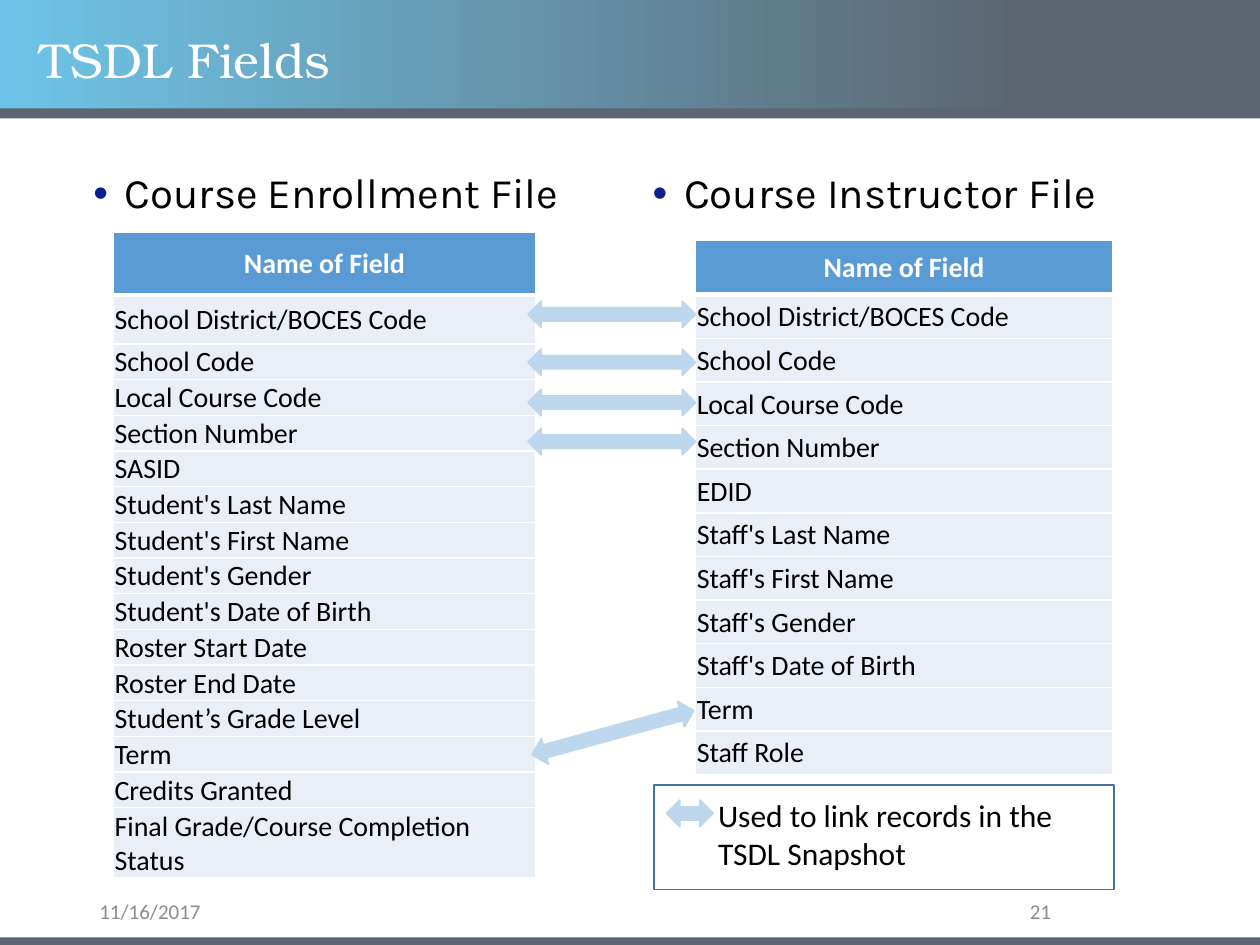
import dataclasses

import lxml.etree
import pptx
import pptx.dml.color
import pptx.enum.shapes
import pptx.enum.text
import pptx.oxml.ns
import pptx.util

SHAPE = pptx.enum.shapes.MSO_SHAPE
ALIGN = pptx.enum.text.PP_ALIGN
MIDDLE = pptx.enum.text.MSO_ANCHOR.MIDDLE
qualify = pptx.oxml.ns.qn


@dataclasses.dataclass(frozen=True)
class Theme:
    sky: str = "6EC4E8"
    slate: str = "5C6670"
    bullet: str = "0D1E8E"
    table_header: str = "5B9BD5"
    table_row: str = "EAEFF7"
    link: str = "BDD7EE"
    legend_line: str = "43739E"
    muted: str = "8C8C8C"
    white: str = "FFFFFF"
    black: str = "000000"
    title_font: str = "TeX Gyre Bonum"
    heading_font: str = "Karla"
    text_font: str = "Calibri"
    title_size: int = 28
    heading_size: int = 24
    legend_size: int = 18
    table_size: int = 16
    footer_size: int = 12


THEME = Theme()
COLUMNS, ROWS = 100, 75  # grid units across and down the slide
UNIT = pptx.util.Inches(10) // COLUMNS

SHARED_FIELDS = ["School District/BOCES Code", "School Code",
                 "Local Course Code", "Section Number"]
ENROLLMENT_FIELDS = SHARED_FIELDS + [
    "SASID", "Student's Last Name", "Student's First Name",
    "Student's Gender", "Student's Date of Birth", "Roster Start Date",
    "Roster End Date", "Student’s Grade Level", "Term", "Credits Granted",
    "Final Grade/Course Completion Status"]
INSTRUCTOR_FIELDS = SHARED_FIELDS + [
    "EDID", "Staff's Last Name", "Staff's First Name", "Staff's Gender",
    "Staff's Date of Birth", "Term", "Staff Role"]


def grid(*units):
    return [pptx.util.Emu(round(unit * UNIT)) for unit in units]


def rgb(color):
    return pptx.dml.color.RGBColor.from_string(color)


def write(paragraph, text, font, size, color, bold=False, align=ALIGN.LEFT):
    paragraph.alignment = align
    run = paragraph.add_run()
    run.text = text
    run.font.name = font
    run.font.size = pptx.util.Pt(size)
    run.font.color.rgb = rgb(color)
    run.font.bold = bold


def move(shape, box):
    shape.left, shape.top, shape.width, shape.height = grid(*box)
    shape.text_frame.auto_size = pptx.enum.text.MSO_AUTO_SIZE.NONE


def add_shape(slide, kind, box, fill=None, line=None):
    shape = slide.shapes.add_shape(kind, *grid(*box))
    shape.shadow.inherit = False
    if fill:
        shape.fill.solid()
        shape.fill.fore_color.rgb = rgb(fill)
    else:
        shape.fill.background()
    if line:
        shape.line.color.rgb = rgb(line)
        shape.line.width = pptx.util.Pt(1)
    else:
        shape.line.fill.background()
    return shape


def add_bands(slide):
    header = add_shape(slide, SHAPE.RECTANGLE, (0, 0, COLUMNS, 8.7))
    header.fill.gradient()
    header.fill.gradient_angle = 0
    stops = [(0, THEME.sky), (0.81, THEME.slate)]
    for stop, (position, color) in zip(header.fill.gradient_stops, stops):
        stop.position = position
        stop.color.rgb = rgb(color)
    for top, height in [(8.6, 0.8), (74.4, 0.6)]:
        add_shape(slide, SHAPE.RECTANGLE, (0, top, COLUMNS, height), THEME.slate)


def fill_title(title, text):
    move(title, (2.1, 2.1, 88.3 - 2.1, 5.7))
    title.text_frame.vertical_anchor = MIDDLE
    paragraph = title.text_frame.paragraphs[0]
    paragraph.line_spacing = 0.9
    write(paragraph, text, THEME.title_font, THEME.title_size, THEME.white)


def fill_heading(body, left, text):
    move(body, (left, 13.2, 42.2, 55.3))
    paragraph = body.text_frame.paragraphs[0]
    properties = paragraph._p.get_or_add_pPr()
    indent = pptx.util.Inches(0.25)
    properties.set("marL", str(indent))
    properties.set("indent", str(-indent))
    color = lxml.etree.SubElement(properties, qualify("a:buClr"))
    lxml.etree.SubElement(color, qualify("a:srgbClr"), val=THEME.bullet)
    lxml.etree.SubElement(properties, qualify("a:buFont"), typeface="Arial")
    lxml.etree.SubElement(properties, qualify("a:buChar"), char="•")
    paragraph.line_spacing = 0.9
    paragraph.space_before = pptx.util.Pt(0)
    write(paragraph, text, THEME.heading_font, THEME.heading_size, THEME.black)


def set_borders(cell, top, bottom):
    properties = cell._tc.get_or_add_tcPr()
    widths = {"a:lnL": 1, "a:lnR": 1, "a:lnT": top, "a:lnB": bottom}
    for index, (side, width) in enumerate(widths.items()):
        line = lxml.etree.Element(qualify(side), w=str(pptx.util.Pt(width)))
        solid = lxml.etree.SubElement(line, qualify("a:solidFill"))
        lxml.etree.SubElement(solid, qualify("a:srgbClr"), val=THEME.white)
        properties.insert(index, line)


def add_field_table(slide, box, fields, fixed_heights):
    """Rows without a fixed height share the remaining height equally."""
    names = ["Name of Field"] + fields
    table = slide.shapes.add_table(len(names), 1, *grid(*box)).table
    shared = (box[3] - sum(fixed_heights.values())) / (len(names) - len(fixed_heights))
    for index, name in enumerate(names):
        header = index == 0
        table.rows[index].height = grid(fixed_heights.get(index, shared))[0]
        cell = table.cell(index, 0)
        cell.margin_left = cell.margin_right = cell.margin_top = pptx.util.Inches(0.01)
        cell.margin_bottom = 0
        cell.vertical_anchor = MIDDLE
        cell.fill.solid()
        cell.fill.fore_color.rgb = rgb(THEME.table_header if header else THEME.table_row)
        set_borders(cell, 3 if index == 1 else 1, 3 if header else 1)
        write(cell.text_frame.paragraphs[0], name, THEME.text_font, THEME.table_size,
              THEME.white if header else THEME.black, header,
              ALIGN.CENTER if header else ALIGN.LEFT)


def add_link(slide, left, top, width=13.3, rotation=0):
    arrow = add_shape(slide, SHAPE.LEFT_RIGHT_ARROW, (left, top, width, 2.1),
                      THEME.link, THEME.link)
    arrow.rotation = rotation


def add_text(slide, box, text, size, color, align=ALIGN.LEFT, anchor=None):
    frame = slide.shapes.add_textbox(*grid(*box)).text_frame
    frame.word_wrap = True
    frame.vertical_anchor = anchor
    write(frame.paragraphs[0], text, THEME.text_font, size, color, align=align)


def main():
    presentation = pptx.Presentation()
    presentation.slide_width, presentation.slide_height = grid(COLUMNS, ROWS)
    slide = presentation.slides.add_slide(presentation.slide_layouts[3])
    title, enrollment, instructor = list(slide.placeholders)

    # Bands go behind the title and headings
    add_bands(slide)
    for placeholder in (instructor, title, enrollment):
        slide.shapes._spTree.append(placeholder._element)
    fill_title(title, "TSDL Fields")
    fill_heading(enrollment, 6.4, "Course Enrollment File")
    fill_heading(instructor, 50.8, "Course Instructor File")

    # Field lists of the two files
    add_field_table(slide, (9, 18.4, 33.5, 51.3), ENROLLMENT_FIELDS,
                    {0: 5, 1: 3.9, 15: 5.6})
    add_field_table(slide, (55.2, 19.1, 33.1, 42.4), INSTRUCTOR_FIELDS, {0: 4.3})

    # Links between matching fields
    for top in (23.9, 27.7, 30.9, 34):
        add_link(slide, 41.9, top)
    add_link(slide, 42, 57.1, rotation=344.7)

    # Legend
    add_text(slide, (56, 62.7, 30.2, 7.1), "Used to link records in the TSDL Snapshot",
             THEME.legend_size, THEME.black)
    add_link(slide, 52.9, 63.5, width=3.7)
    add_shape(slide, SHAPE.RECTANGLE, (51.9, 62.3, 36.5, 8.3), line=THEME.legend_line)

    # Footer
    add_text(slide, (6.9, 71.2, 22.5, 2.3), "11/16/2017", THEME.footer_size,
             THEME.muted, anchor=MIDDLE)
    add_text(slide, (70.6, 71.2, 13.8, 2.3), "21", THEME.footer_size,
             THEME.muted, ALIGN.RIGHT, MIDDLE)

    presentation.save("out.pptx")


if __name__ == "__main__":
    main()
